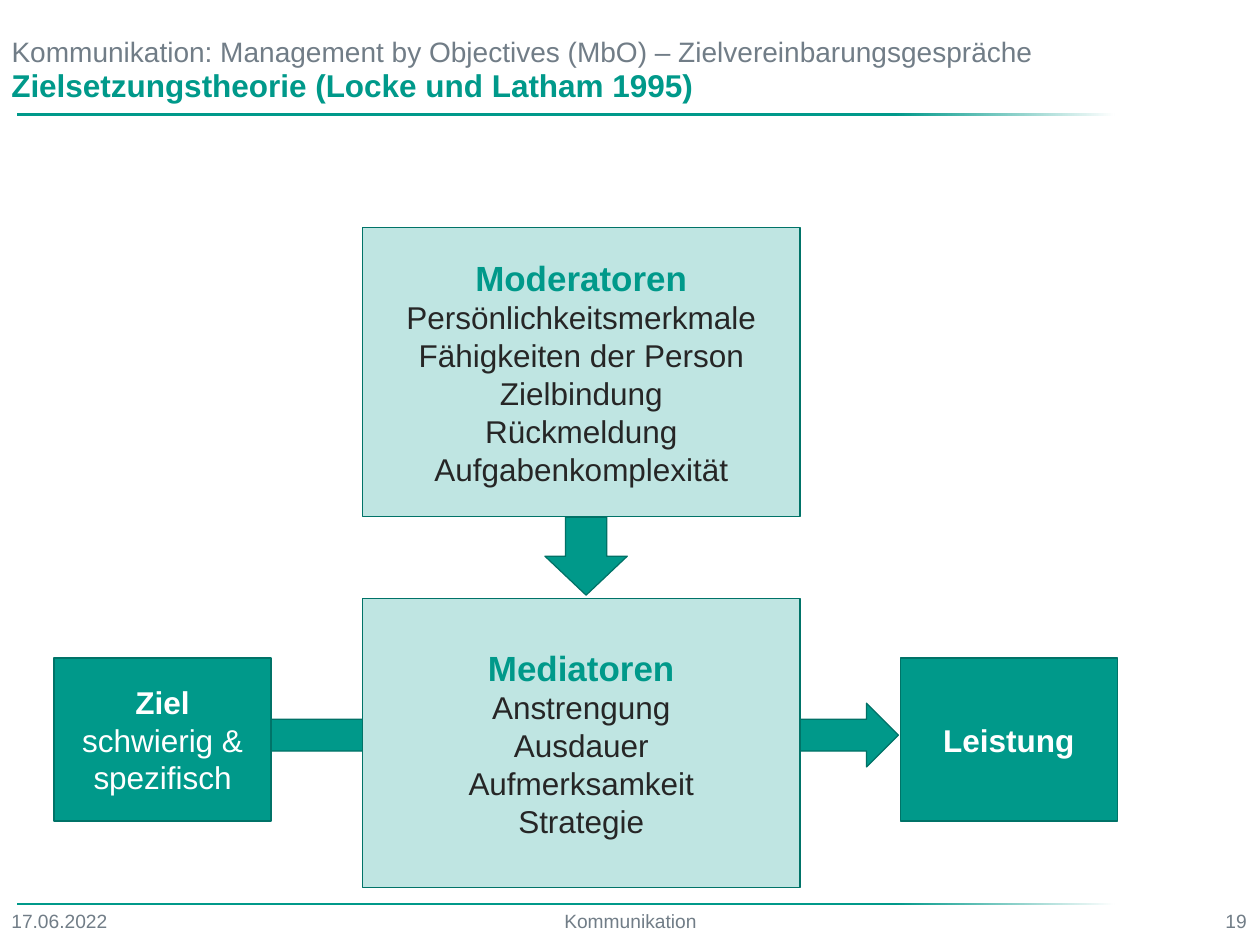
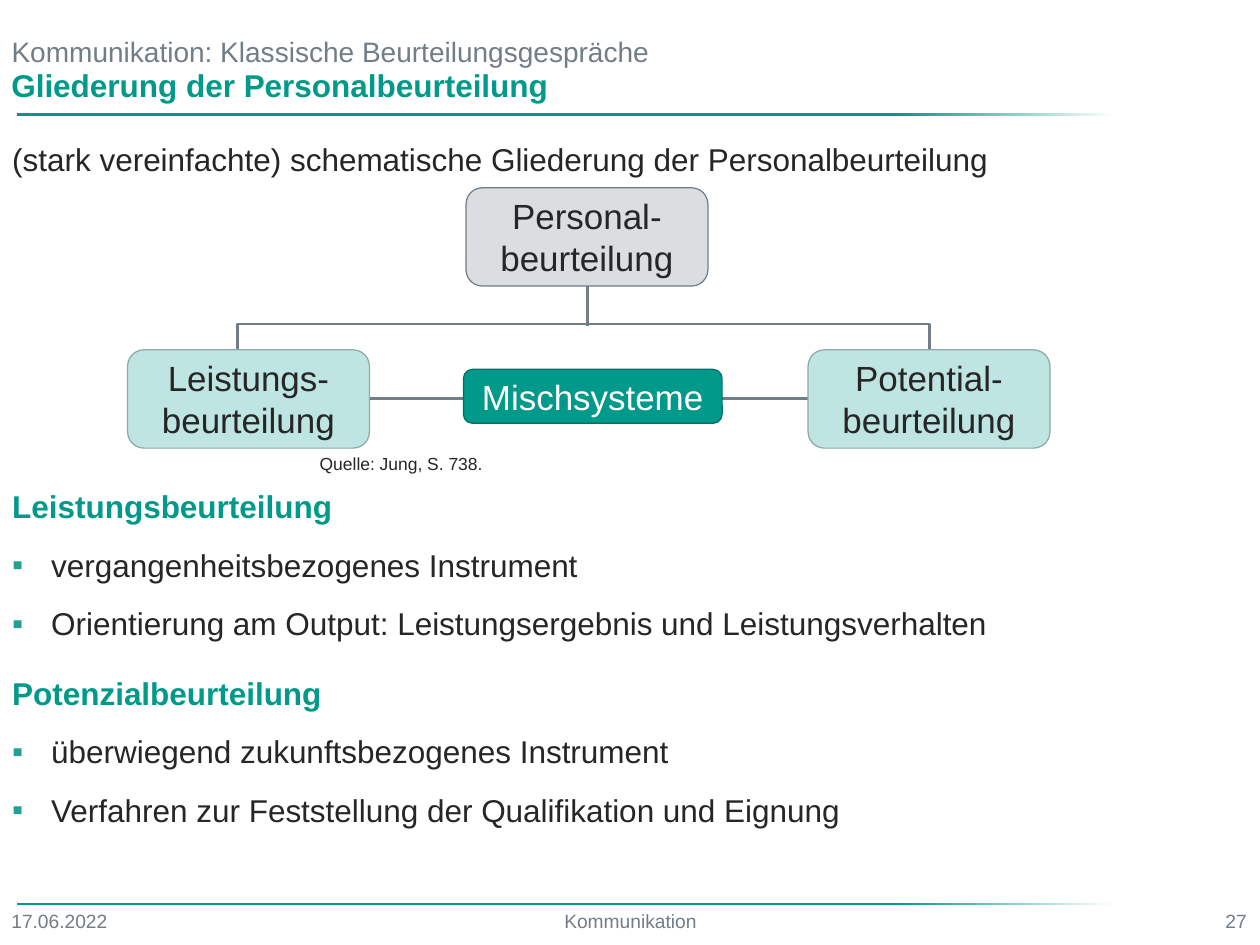
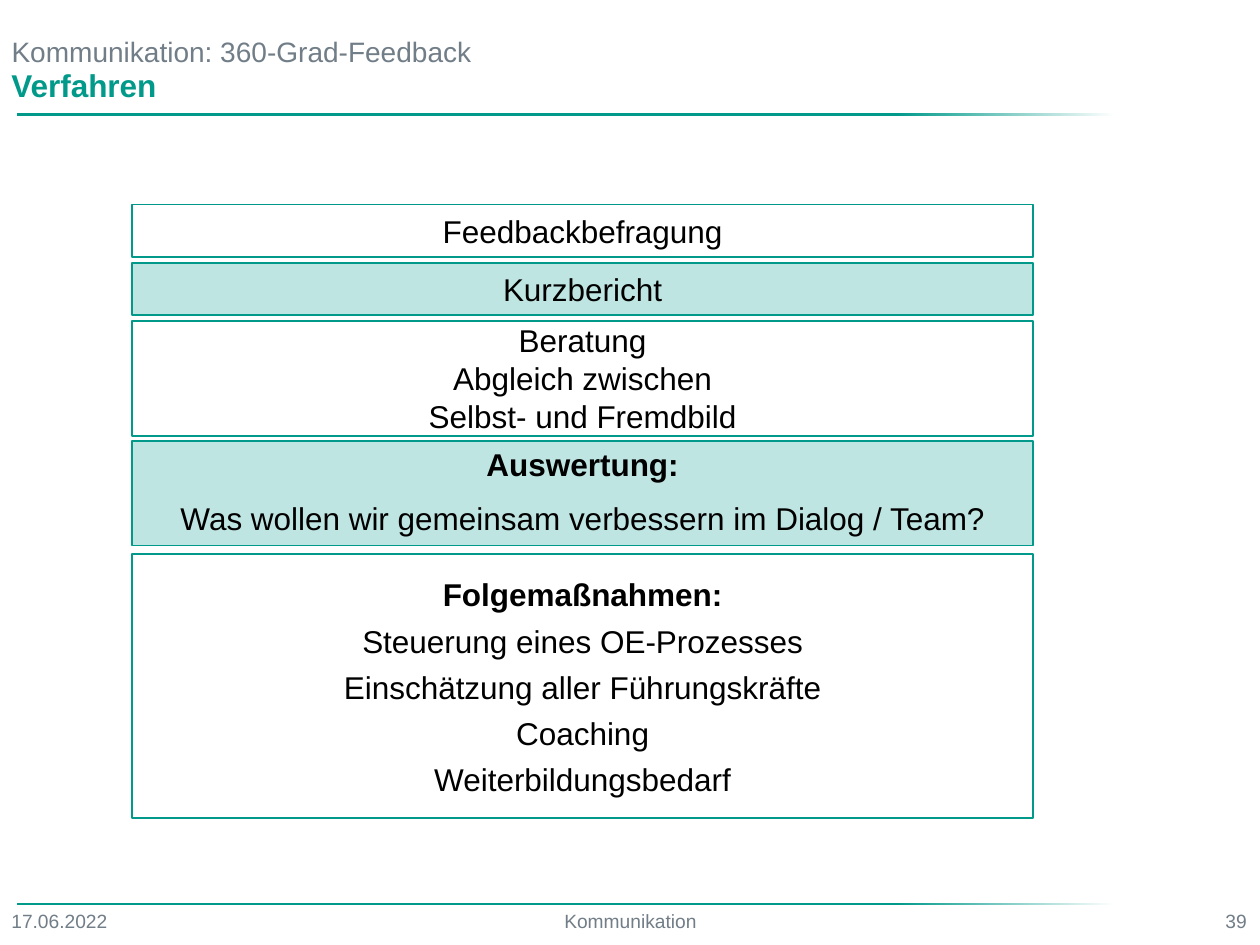
from dataclasses import dataclass
from typing import Any, Optional

from lxml import etree
from pptx import Presentation
from pptx.dml.color import RGBColor
from pptx.enum.shapes import MSO_CONNECTOR, MSO_SHAPE
from pptx.enum.text import MSO_ANCHOR, MSO_AUTO_SIZE, PP_ALIGN
from pptx.oxml.ns import qn
from pptx.util import Inches, Pt

RECTANGLE = MSO_SHAPE.RECTANGLE
ROUNDED = MSO_SHAPE.ROUNDED_RECTANGLE
DOWN_ARROW = MSO_SHAPE.DOWN_ARROW
STRAIGHT, ELBOW = MSO_CONNECTOR.STRAIGHT, MSO_CONNECTOR.ELBOW
LEFT, CENTER, RIGHT = PP_ALIGN.LEFT, PP_ALIGN.CENTER, PP_ALIGN.RIGHT
TOP, MIDDLE, BOTTOM = MSO_ANCHOR.TOP, MSO_ANCHOR.MIDDLE, MSO_ANCHOR.BOTTOM

FONT = "Arial"
TEAL, MINT, GRAY, PALE_GRAY = "00998A", "BFE5E2", "717D87", "DBDEE1"
INK, BLACK, WHITE = "262626", "000000", "FFFFFF"
DARK_TEAL, DEEP_TEAL, MINT_EDGE, BULLET_TEAL = "007368", "007166", "8DA9A7", "23A092"
BODY, LARGE, TITLE, FOOTER, SOURCE = 25.6, 28.4, 22.8, 15.6, 14.2
HALF_LINE = 12.8
INSETS = (0.1, 0.05)
TITLE_ONLY = 5

Box = tuple[float, float, float, float]


@dataclass(frozen=True)
class Line:
    text: str
    size: float = BODY
    color: str = INK
    bold: bool = False
    align: Any = CENTER
    before: float = 0
    after: float = 0
    spacing: Optional[float] = None
    bullet: bool = False


@dataclass(frozen=True)
class Panel:
    box: Box
    fill: str
    edge: str
    lines: tuple[Line, ...] = ()
    kind: Any = RECTANGLE
    edge_width: float = 1
    rotation: float = 0
    anchor: Any = MIDDLE
    insets: tuple[float, float] = INSETS
    wrap: bool = True


def rgb(color: str) -> RGBColor:
    return RGBColor.from_string(color)


def assign(target: Any, values: dict[str, Any]) -> None:
    for name, value in values.items():
        setattr(target, name, value)


def inches(box: Box) -> list[int]:
    return [Inches(length) for length in box]


def add_bullet(paragraph: Any) -> None:
    properties = paragraph._p.get_or_add_pPr()
    properties.set("marL", str(Inches(0.44)))
    properties.set("indent", str(Inches(-0.44)))
    bullet_color = etree.SubElement(properties, qn("a:buClr"))
    etree.SubElement(bullet_color, qn("a:srgbClr"), val=BULLET_TEAL)
    etree.SubElement(properties, qn("a:buFont"), typeface=FONT)
    etree.SubElement(properties, qn("a:buChar"), char="▪")


def write(shape: Any, lines: tuple[Line, ...], anchor: Any = TOP,
          insets: tuple[float, float] = INSETS, wrap: bool = True) -> None:
    frame = shape.text_frame
    side, end = (Inches(inset) for inset in insets)
    assign(frame, {
        "auto_size": MSO_AUTO_SIZE.NONE, "word_wrap": wrap, "vertical_anchor": anchor,
        "margin_left": side, "margin_right": side, "margin_top": end, "margin_bottom": end,
    })
    for index, line in enumerate(lines):
        paragraph = frame.add_paragraph() if index else frame.paragraphs[0]
        if line.bullet:
            add_bullet(paragraph)
        assign(paragraph, {
            "alignment": line.align, "line_spacing": line.spacing,
            "space_before": Pt(line.before), "space_after": Pt(line.after),
        })
        run = paragraph.add_run()
        run.text = line.text
        assign(run.font, {"name": FONT, "size": Pt(line.size), "bold": line.bold})
        run.font.color.rgb = rgb(line.color)


def add_text(slide: Any, box: Box, *lines: Line, anchor: Any = TOP) -> None:
    write(slide.shapes.add_textbox(*inches(box)), lines, anchor)


def add_panel(slide: Any, panel: Panel) -> None:
    shape = slide.shapes.add_shape(panel.kind, *inches(panel.box))
    shape.shadow.inherit = False
    shape.rotation = panel.rotation
    shape.fill.solid()
    shape.fill.fore_color.rgb = rgb(panel.fill)
    shape.line.color.rgb = rgb(panel.edge)
    shape.line.width = Pt(panel.edge_width)
    if panel.lines:
        write(shape, panel.lines, panel.anchor, panel.insets, panel.wrap)


def add_line(slide: Any, start: tuple[float, float], end: tuple[float, float],
             kind: Any = STRAIGHT) -> Any:
    connector = slide.shapes.add_connector(kind, *inches((*start, *end)))
    connector.line.color.rgb = rgb(GRAY)
    connector.line.width = Pt(1.75)
    etree.SubElement(connector._element.spPr, qn("a:effectLst"))
    return connector


def add_bracket(slide: Any, left: float, right: float, top: float, bottom: float) -> None:
    """Elbow connector turned into a bracket that is open at the bottom."""
    thickness = 0.02
    center_x, center_y = (left + right) / 2, bottom - thickness / 2
    half = (right - left) / 2
    connector = add_line(slide, (center_x - thickness / 2, center_y - half),
                         (center_x + thickness / 2, center_y + half), ELBOW)
    properties = connector._element.spPr
    for name, value in {"rot": "5400000", "flipH": "1", "flipV": "1"}.items():
        properties.find(qn("a:xfrm")).set(name, value)
    geometry = properties.find(qn("a:prstGeom"))
    guides = geometry.find(qn("a:avLst"))
    if guides is None:
        guides = etree.SubElement(geometry, qn("a:avLst"))
    bend = round((bottom - top) / thickness * 100000)
    etree.SubElement(guides, qn("a:gd"), name="adj1", fmla=f"val {bend}")


def add_fading_rule(slide: Any, top: float, height: float) -> None:
    rule = slide.shapes.add_shape(RECTANGLE, *inches((0.19, top, 12.39, height)))
    rule.shadow.inherit = False
    rule.line.fill.background()
    rule.fill.gradient()
    rule.fill.gradient_angle = 0
    for stop, position, color in zip(rule.fill.gradient_stops, (0.8, 1), (TEAL, WHITE)):
        stop.position = position
        stop.color.rgb = rgb(color)


def new_slide(presentation: Any, topic: str, heading: str, number: int) -> Any:
    slide = presentation.slides.add_slide(presentation.slide_layouts[TITLE_ONLY])
    add_fading_rule(slide, 1.28, 0.03)
    add_fading_rule(slide, 10.2, 0.02)
    footers = ((11.8, 2.37, str(number), RIGHT), (2.79, 8.65, "Kommunikation", CENTER),
               (0.03, 2.37, "17.06.2022", LEFT))
    for left, width, text, align in footers:
        add_text(slide, (left, 10.22, width, 0.44), Line(text, FOOTER, GRAY, align=align))
    title = slide.shapes.title
    assign(title, dict(zip(("left", "top", "width", "height"),
                           inches((0.03, 0.27, 12.34, 0.55)))))
    write(title, (Line(f"Kommunikation: {topic}", TITLE, GRAY, align=LEFT),), BOTTOM)
    add_text(slide, (0.03, 0.68, 12.37, 0.56),
             Line(heading, color=TEAL, bold=True, align=LEFT), anchor=MIDDLE)
    return slide


def build_goal_setting(presentation: Any) -> None:
    slide = new_slide(presentation, "Management by Objectives (MbO) – Zielvereinbarungsgespräche",
                      "Zielsetzungstheorie (Locke und Latham 1995)", 19)

    def factors(top: float, name: str, *items: str) -> Panel:
        lines = (Line(name, LARGE, TEAL, True), *(Line(item) for item in items))
        return Panel((4.09, top, 4.94, 3.26), MINT, DARK_TEAL, lines)

    def endpoint(left: float, name: str, *details: str) -> Panel:
        lines = (Line(name, color=WHITE, bold=True),
                 *(Line(detail, color=WHITE) for detail in details))
        return Panel((left, 7.43, 2.45, 1.84), TEAL, DARK_TEAL, lines)

    panels = (
        Panel((6.23, 4.75, 0.72, 7.1), TEAL, DEEP_TEAL, kind=DOWN_ARROW, rotation=270),
        factors(2.57, "Moderatoren", "Persönlichkeitsmerkmale", "Fähigkeiten der Person",
                "Zielbindung", "Rückmeldung", "Aufgabenkomplexität"),
        Panel((6.15, 5.84, 0.93, 0.88), TEAL, DEEP_TEAL, kind=DOWN_ARROW),
        factors(6.76, "Mediatoren", "Anstrengung", "Ausdauer", "Aufmerksamkeit", "Strategie"),
        endpoint(0.61, "Ziel", "schwierig & spezifisch"),
        endpoint(10.16, "Leistung"),
    )
    for panel in panels:
        add_panel(slide, panel)


def build_appraisal_structure(presentation: Any) -> None:
    slide = new_slide(presentation, "Klassische Beurteilungsgespräche",
                      "Gliederung der Personalbeurteilung", 27)
    add_text(slide, (0.04, 1.53, 12.93, 0.55),
             Line("(stark vereinfachte) schematische Gliederung der Personalbeurteilung",
                  align=LEFT))

    def section(name: str, *items: str, before: float = 0) -> tuple[Line, ...]:
        return (Line(name, color=TEAL, bold=True, align=LEFT, before=before, after=8.5),
                *(Line(item, align=LEFT, before=8.5, after=8.5, bullet=True)
                  for item in items))

    add_text(slide, (0.04, 5.45, 12.93, 4.42),
             *section("Leistungsbeurteilung", "vergangenheitsbezogenes Instrument",
                      "Orientierung am Output: Leistungsergebnis und Leistungsverhalten"),
             *section("Potenzialbeurteilung", "überwiegend zukunftsbezogenes Instrument",
                      "Verfahren zur Feststellung der Qualifikation und Eignung", before=17.1))
    add_text(slide, (3.51, 5.07, 6.34, 0.34),
             Line("Quelle: Jung, S. 738.", SOURCE, align=LEFT))

    add_bracket(slide, 2.68, 10.49, 3.66, 4.01)
    add_line(slide, (4.17, 4.5), (9.12, 4.5))
    nodes = (
        ((5.26, 2.12, 2.73, 1.11), "Personal-beurteilung", PALE_GRAY, GRAY, INK),
        ((1.44, 3.95, 2.73, 1.11), "Leistungs-beurteilung", MINT, MINT_EDGE, INK),
        ((9.12, 3.95, 2.73, 1.11), "Potential-beurteilung", MINT, MINT_EDGE, INK),
        ((5.23, 4.17, 2.92, 0.61), "Mischsysteme", TEAL, DEEP_TEAL, WHITE),
    )
    for box, text, fill, edge, color in nodes:
        add_panel(slide, Panel(box, fill, edge, (Line(text, LARGE, color),), ROUNDED))
    add_line(slide, (6.63, 3.23), (6.63, 3.68))


def build_feedback_steps(presentation: Any) -> None:
    slide = new_slide(presentation, "360-Grad-Feedback", "Verfahren", 39)

    def step(top: float, height: float, fill: str, *lines: Line, **options: Any) -> Panel:
        settings = {"insets": (0.14, 0.07), "wrap": False, **options}
        return Panel((1.49, top, 10.17, height), fill, TEAL, lines, edge_width=1.5, **settings)

    def plain(*texts: str, **options: Any) -> tuple[Line, ...]:
        return tuple(Line(text, color=BLACK, **options) for text in texts)

    panels = (
        step(2.31, 0.59, WHITE, *plain("Feedbackbefragung")),
        step(2.97, 0.59, MINT, *plain("Kurzbericht")),
        step(3.62, 1.3, WHITE,
             *plain("Beratung", "Abgleich zwischen", "Selbst- und Fremdbild")),
        step(4.98, 1.18, MINT, *plain("Auswertung:", bold=True),
             *plain("Was wollen wir gemeinsam verbessern im Dialog / Team?",
                    before=HALF_LINE),
             anchor=TOP, insets=INSETS, wrap=True),
        step(6.26, 2.98, WHITE, *plain("Folgemaßnahmen:", bold=True),
             *plain("Steuerung eines OE-Prozesses", "Einschätzung aller Führungskräfte",
                    "Coaching", "Weiterbildungsbedarf", before=HALF_LINE, spacing=0.8)),
    )
    for panel in panels:
        add_panel(slide, panel)


def main() -> None:
    presentation = Presentation()
    presentation.slide_width = Inches(14.22)
    presentation.slide_height = Inches(10.67)
    build_goal_setting(presentation)
    build_appraisal_structure(presentation)
    build_feedback_steps(presentation)
    presentation.save("out.pptx")


if __name__ == "__main__":
    main()
